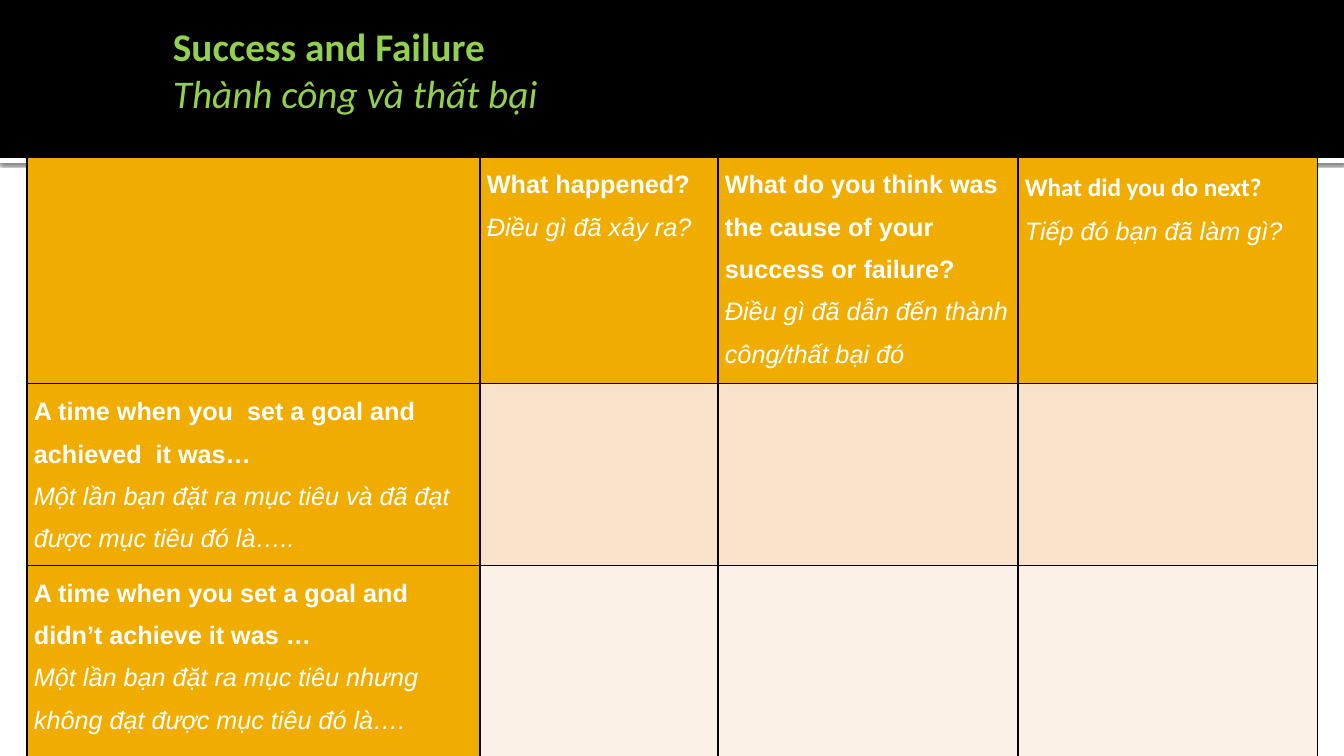
from lxml import etree
from pptx import Presentation
from pptx.dml.color import RGBColor
from pptx.enum.shapes import MSO_SHAPE
from pptx.enum.text import MSO_ANCHOR
from pptx.oxml import parse_xml
from pptx.util import Emu, Pt

RECTANGLE = MSO_SHAPE.RECTANGLE
MIDDLE = MSO_ANCHOR.MIDDLE
A_NS = "http://schemas.openxmlformats.org/drawingml/2006/main"
PX = 914400 / 100.8

GOLD, PEACH, CREAM = "F0AD00", "F9E2CA", "FCF1E6"
WHITE, BLACK, GREEN = "FFFFFF", "000000", "92D050"


def px(*lengths):
    return [Emu(round(length * PX)) for length in lengths]


def write_bilingual(frame, english, vietnamese, size, fonts, color, spacing):
    """Bold English paragraph followed by its italic Vietnamese translation."""
    frame.word_wrap = True
    frame.text = f"{english}\n{vietnamese}"
    for index, paragraph in enumerate(frame.paragraphs):
        paragraph.line_spacing = spacing
        font = paragraph.runs[0].font
        font.name, font.size = fonts[index], Pt(size)
        font.bold, font.italic = index == 0, index == 1
        font.color.rgb = RGBColor.from_string(color)


prs = Presentation()
prs.slide_width, prs.slide_height = px(1344, 756)
slide = prs.slides.add_slide(prs.slide_layouts[6])

# White strip under the black header band
for top, height, color in [(158, 5, WHITE), (0, 158, BLACK)]:
    band = slide.shapes.add_shape(RECTANGLE, *px(0, top, 1344, height))
    band.shadow.inherit = False
    band.fill.solid()
    band.fill.fore_color.rgb = RGBColor.from_string(color)
    band.line.fill.background()
    if color == WHITE:
        effects = band._element.spPr.find(f"{{{A_NS}}}effectLst")
        effects.append(parse_xml(
            f'<a:outerShdw xmlns:a="{A_NS}" blurRad="31750" dist="10160" '
            'dir="5400000" algn="tl" rotWithShape="0"><a:srgbClr val="000000">'
            '<a:alpha val="60000"/></a:srgbClr></a:outerShdw>'))

# Title
title = slide.shapes.add_textbox(*px(163, 18, 907, 103)).text_frame
title.vertical_anchor = MIDDLE
title.margin_left, title.margin_right, title.margin_top, title.margin_bottom = px(10, 5, 5, 5)
write_bilingual(title, "Success and Failure", "Thành công và thất bại",
                28, ("Calibri", "Calibri"), GREEN, 1.0)

# Reflection table
column_widths = [453, 238, 300, 300]
row_heights = [219, 179, 200]
row_fills = [GOLD, PEACH, CREAM]
prompts = {
    (0, 1): ("What happened?", "Điều gì đã xảy ra?"),
    (0, 2): ("What do you think was the cause of your success or failure?",
             "Điều gì đã dẫn đến thành công/thất bại đó"),
    (0, 3): ("What did you do next?", "Tiếp đó bạn đã làm gì?"),
    (1, 0): ("A time when you  set a goal and achieved  it was…",
             "Một lần bạn đặt ra mục tiêu và đã đạt được mục tiêu đó là….."),
    (2, 0): ("A time when you set a goal and didn’t achieve it was …",
             "Một lần bạn đặt ra mục tiêu nhưng không đạt được mục tiêu đó là…."),
}
reflection = slide.shapes.add_table(
    len(row_heights), len(column_widths),
    *px(27, 157, sum(column_widths), sum(row_heights))).table
reflection.horz_banding = False
for column, width in zip(reflection.columns, px(*column_widths)):
    column.width = width
for row, height in zip(reflection.rows, px(*row_heights)):
    row.height = height

for r, row_fill in enumerate(row_fills):
    for c in range(len(column_widths)):
        cell = reflection.cell(r, c)
        cell.margin_left, cell.margin_right, cell.margin_top, cell.margin_bottom = px(7, 7, 0, 0)
        if (r, c) in prompts:
            english_font = "Calibri" if (r, c) == (0, 3) else "Arial"
            write_bilingual(cell.text_frame, *prompts[r, c], 18,
                            (english_font, "Arial"), WHITE, 1.5)
        # Borders come before the fill in the cell properties
        properties = cell._tc.get_or_add_tcPr()
        for side in ("lnL", "lnR", "lnT", "lnB"):
            border = etree.SubElement(properties, f"{{{A_NS}}}{side}", w="12700")
            solid = etree.SubElement(border, f"{{{A_NS}}}solidFill")
            etree.SubElement(solid, f"{{{A_NS}}}srgbClr", val=BLACK)
        cell.fill.solid()
        cell.fill.fore_color.rgb = RGBColor.from_string(GOLD if c == 0 else row_fill)

prs.save("out.pptx")
